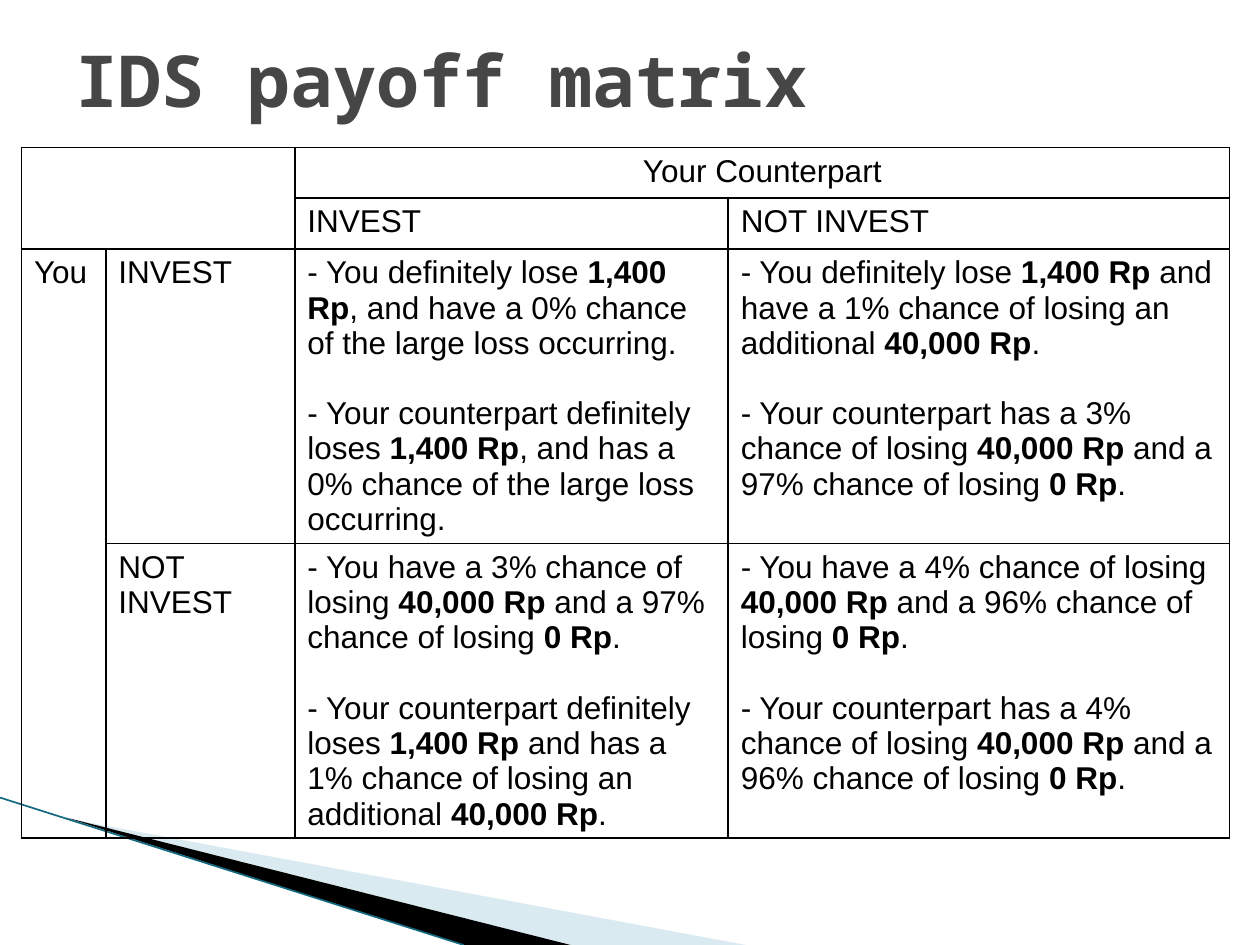
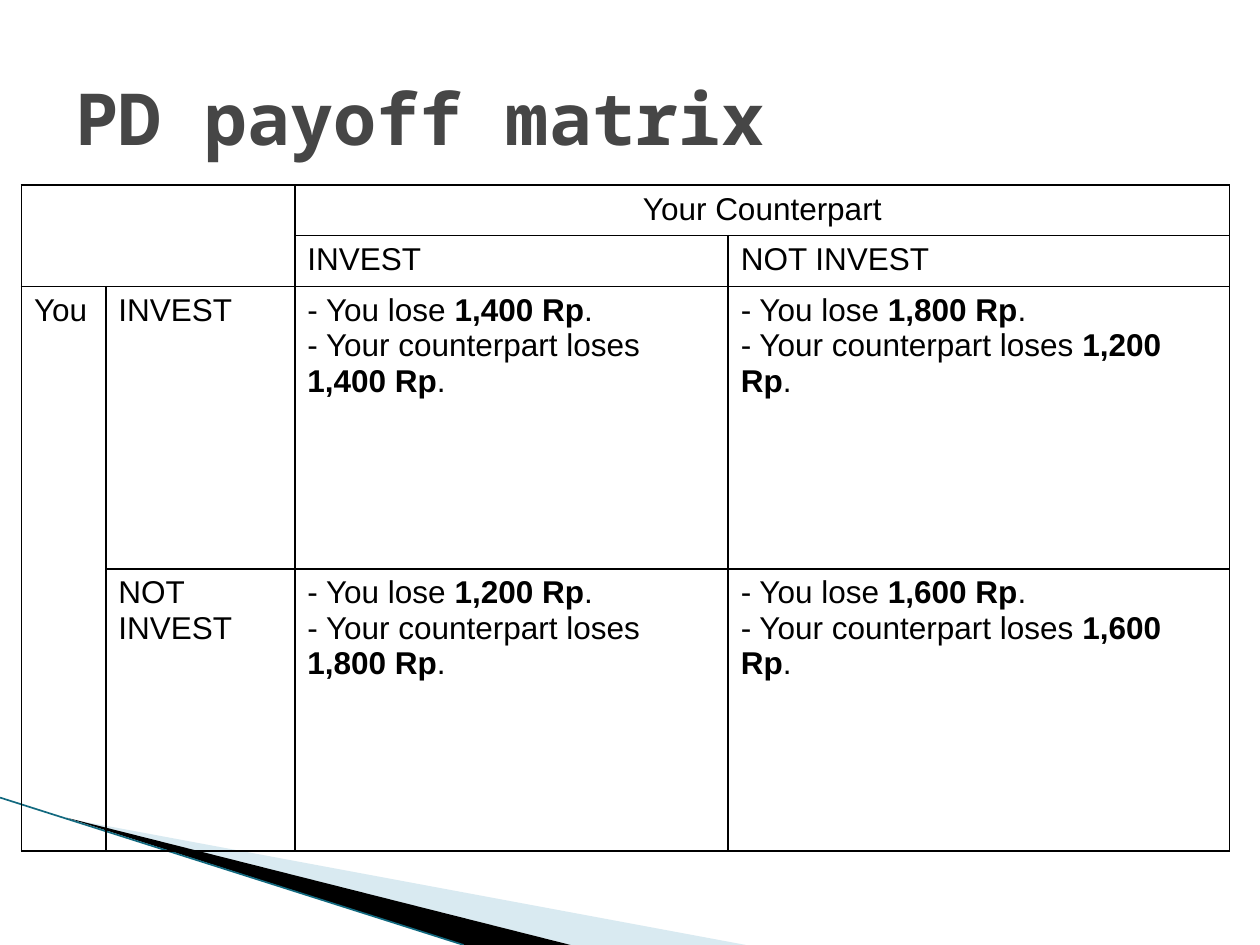
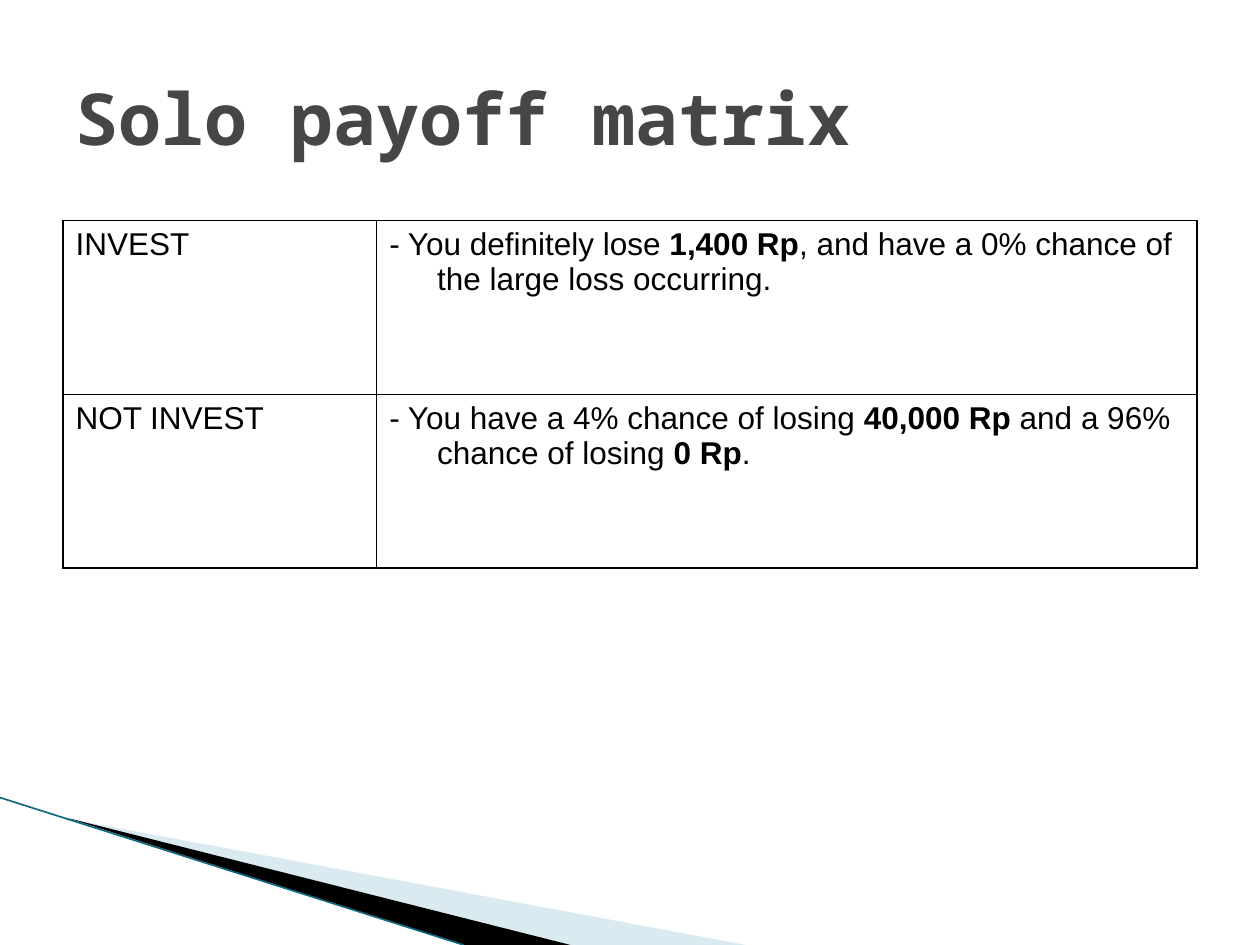
from dataclasses import dataclass

from lxml.etree import SubElement
from pptx import Presentation
from pptx.dml.color import RGBColor
from pptx.enum.shapes import MSO_CONNECTOR as Link
from pptx.enum.text import MSO_ANCHOR as Anchor, PP_ALIGN as Align
from pptx.oxml.ns import qn
from pptx.util import Inches, Pt

BLACK = "000000"
GREY = "464646"
PALE = "A0CBDC"
TEAL = "12697F"
TITLE = {"name": "Noto Sans Mono", "size": Pt(41), "bold": True}
BODY = {"name": "Arial", "size": Pt(18)}
HANG = Inches(0.38)
EDGE = Pt(1)


@dataclass
class Wedge:
    points: list[tuple[float, float]]
    color: str
    alpha: int = 100


@dataclass
class Cell:
    """Text of one cell, one string per paragraph, with *bold* parts."""
    row: int
    col: int
    lines: list[str]
    hang: bool = True
    align: Align = Align.LEFT
    gap: float = 0


@dataclass
class Grid:
    left: float
    top: float
    cols: list[float]
    rows: list[float]
    cells: list[Cell]
    spans: tuple = ()


@dataclass
class Page:
    title: str
    top: float
    grid: Grid


WEDGES = [
    Wedge([(0.55, 6.5), (5.92, 7.5), (4.53, 7.5)], PALE, 40),
    Wedge([(0.53, 6.49), (4.53, 7.5), (3.68, 7.5)], BLACK),
]


def paint(target, color: str) -> None:
    """Fill a shape or line with a solid colour."""
    target.fill.solid()
    target.fill.fore_color.rgb = RGBColor.from_string(color)


def style(font, looks: dict, color: str) -> None:
    for key, value in looks.items():
        setattr(font, key, value)
    font.color.rgb = RGBColor.from_string(color)


def draw_wedge(slide, wedge: Wedge) -> None:
    start, *rest = [(Inches(x), Inches(y)) for x, y in wedge.points]
    pen = slide.shapes.build_freeform(*start)
    pen.add_line_segments(rest, close=True)
    shape = pen.convert_to_shape()
    shape.shadow.inherit = False
    paint(shape, wedge.color)
    shape.line.fill.background()
    if wedge.alpha < 100:
        tint = shape.fill._xPr.find(".//" + qn("a:srgbClr"))
        SubElement(tint, qn("a:alpha"), val=str(wedge.alpha * 1000))


def draw_band(slide) -> None:
    """Draw the corner sweep that every slide carries."""
    for wedge in WEDGES:
        draw_wedge(slide, wedge)
    line = slide.shapes.add_connector(
        Link.STRAIGHT, 0, Inches(6.33), Inches(3.68), Inches(7.5))
    paint(line.line, TEAL)
    line.line.width = Pt(0.95)
    SubElement(line._element.spPr, qn("a:effectLst"))


def draw_title(slide, page: Page) -> None:
    title = slide.shapes.title
    place = {"left": 0.5, "top": page.top, "width": 9, "height": 1.25}
    for key, value in place.items():
        setattr(title, key, Inches(value))
    frame = title.text_frame
    frame.text = page.title
    frame.vertical_anchor = Anchor.MIDDLE
    para = frame.paragraphs[0]
    para.alignment = Align.LEFT
    style(para.runs[0].font, TITLE, GREY)


def rule_cell(cell) -> None:
    """Give a cell black edges and no fill."""
    props = cell._tc.get_or_add_tcPr()
    for side in ("lnL", "lnR", "lnT", "lnB"):
        edge = SubElement(props, qn(f"a:{side}"), w=str(EDGE))
        fill = SubElement(edge, qn("a:solidFill"))
        SubElement(fill, qn("a:srgbClr"), val=BLACK)
    cell.fill.background()


def write(box, cell: Cell) -> None:
    frame = box.text_frame
    for i, line in enumerate(cell.lines):
        para = frame.add_paragraph() if i else frame.paragraphs[0]
        para.alignment = cell.align
        if i and cell.gap:
            para.space_before = Pt(cell.gap)
        if cell.hang:
            props = para._p.get_or_add_pPr()
            props.set("marL", str(HANG))
            props.set("indent", str(-HANG))
        for j, part in enumerate(line.split("*")):
            if part:
                run = para.add_run()
                run.text = part
                style(run.font, BODY | {"bold": j % 2 == 1}, BLACK)


def draw_grid(slide, grid: Grid) -> None:
    table = slide.shapes.add_table(
        len(grid.rows), len(grid.cols), Inches(grid.left), Inches(grid.top),
        Inches(sum(grid.cols)), Inches(sum(grid.rows))).table
    table.first_row = table.horz_banding = False
    for col, width in zip(table.columns, grid.cols):
        col.width = Inches(width)
    for row, height in zip(table.rows, grid.rows):
        row.height = Inches(height)
    for box in table.iter_cells():
        rule_cell(box)
    for first, last in grid.spans:
        table.cell(*first).merge(table.cell(*last))
    for cell in grid.cells:
        write(table.cell(cell.row, cell.col), cell)


def duel(top: float, texts: list[list[str]], gap: float = 0) -> Grid:
    """Lay out a two-player matrix; texts run row by row."""
    heads = [
        Cell(0, 2, ["Your Counterpart"], align=Align.CENTER),
        Cell(1, 2, ["INVEST"]),
        Cell(1, 3, ["NOT INVEST"]),
        Cell(2, 0, ["You"]),
        Cell(2, 1, ["INVEST"]),
        Cell(3, 1, ["NOT", "INVEST"]),
    ]
    pays = [Cell(2 + i // 2, 2 + i % 2, lines, hang=False, gap=gap)
            for i, lines in enumerate(texts)]
    spans = (((0, 0), (1, 1)), ((0, 2), (0, 3)), ((2, 0), (3, 0)))
    return Grid(0.17, top, [0.67, 1.5, 3.44, 3.98], [0.4, 0.4, 2.24, 2.24],
                heads + pays, spans)


def solo(texts: list[str]) -> Grid:
    """Lay out a one-player matrix."""
    cells = []
    for row, (head, text) in enumerate(zip(("INVEST", "NOT INVEST"), texts)):
        cells += [Cell(row, 0, [head]), Cell(row, 1, [text])]
    return Grid(0.5, 1.75, [2.49, 6.51], [1.38, 1.38], cells)


def losses(you: str, other: str) -> list[str]:
    return [f"- You lose *{you} Rp*.",
            f"- Your counterpart loses *{other} Rp*."]


IDS = [
    ["- You definitely lose *1,400 Rp*, and have a 0% chance of the large "
     "loss occurring.",
     "- Your counterpart definitely loses *1,400 Rp*, and has a 0% chance "
     "of the large loss occurring."],
    ["- You definitely lose *1,400 Rp* and have a 1% chance of losing an "
     "additional *40,000 Rp*.",
     "- Your counterpart has a 3% chance of losing *40,000 Rp* and a 97% "
     "chance of losing *0 Rp*."],
    ["- You have a 3% chance of losing *40,000 Rp* and a 97% chance of "
     "losing *0 Rp*.",
     "- Your counterpart definitely loses *1,400 Rp* and has a 1% chance "
     "of losing an additional *40,000 Rp*."],
    ["- You have a 4% chance of losing *40,000 Rp* and a 96% chance of "
     "losing *0 Rp*.",
     "- Your counterpart has a 4% chance of losing *40,000 Rp* and a 96% "
     "chance of losing *0 Rp*."],
]
PD = [losses("1,400", "1,400"), losses("1,800", "1,200"),
      losses("1,200", "1,800"), losses("1,600", "1,600")]
SOLO = [
    "- You definitely lose *1,400 Rp*, and have a 0% chance of the large "
    "loss occurring.",
    "- You have a 4% chance of losing *40,000 Rp* and a 96% chance of "
    "losing *0 Rp*.",
]
PAGES = [
    Page("IDS payoff matrix", 0, duel(1.17, IDS, gap=20)),
    Page("PD payoff matrix", 0.3, duel(1.47, PD)),
    Page("Solo payoff matrix", 0.3, solo(SOLO)),
]


def main() -> None:
    deck = Presentation()
    deck.slide_width, deck.slide_height = Inches(10), Inches(7.5)
    for page in PAGES:
        slide = deck.slides.add_slide(deck.slide_layouts[5])
        draw_band(slide)
        draw_title(slide, page)
        draw_grid(slide, page.grid)
    deck.save("out.pptx")


if __name__ == "__main__":
    main()
